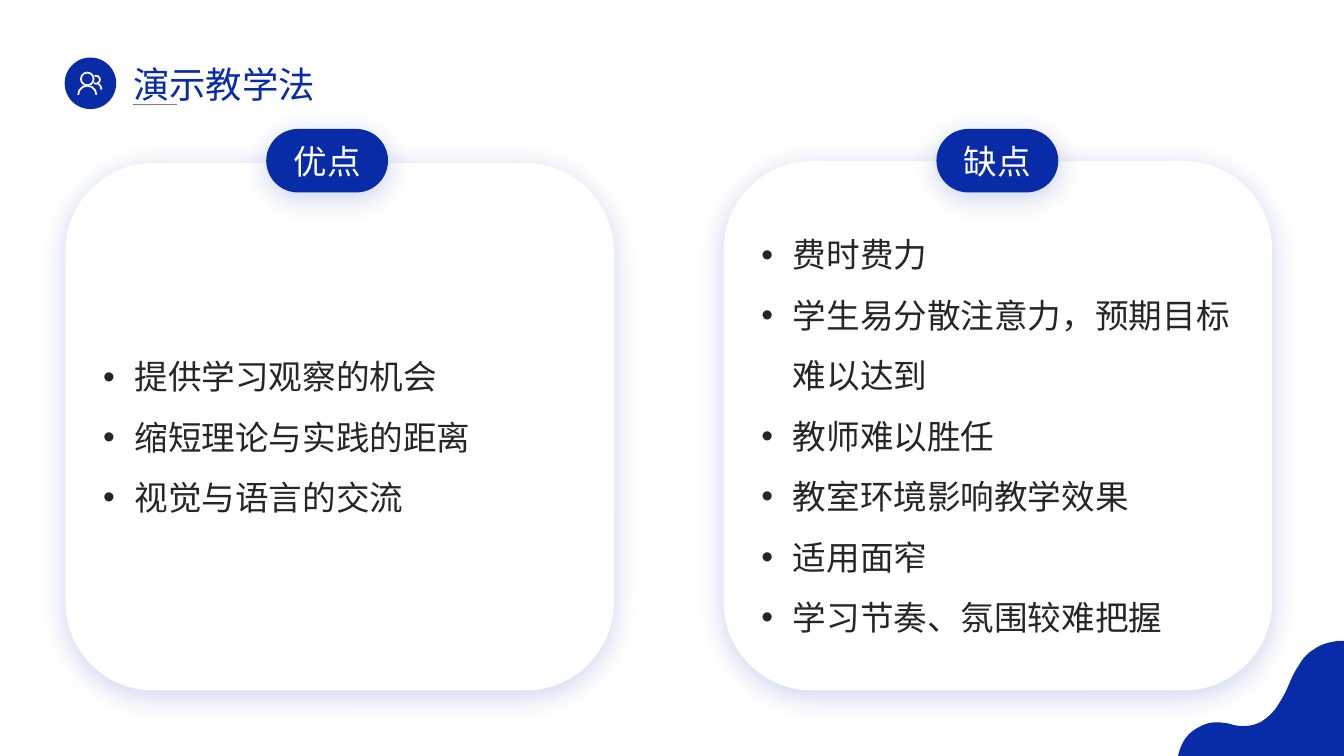
"""Build the slide on the pros and cons of teaching by demonstration."""
from lxml.etree import SubElement
from pptx import Presentation
from pptx.dml.color import RGBColor
from pptx.enum.shapes import MSO_CONNECTOR, MSO_SHAPE
from pptx.enum.text import MSO_ANCHOR, MSO_AUTO_SIZE, PP_ALIGN
from pptx.oxml.ns import qn
from pptx.util import Cm, Pt

BLUE = RGBColor(0x08, 0x2C, 0xA8)
WHITE = RGBColor(0xFF, 0xFF, 0xFF)
INK = RGBColor(0x26, 0x26, 0x26)
GREY = RGBColor(0x80, 0x80, 0x80)
FONT = "Noto Sans CJK SC"


def format_text(paragraph, size, color, alignment):
    paragraph.alignment = alignment
    for run in paragraph.runs:
        run.font.name = FONT
        run.font.size = Pt(size)
        run.font.color.rgb = color
        SubElement(run.font._element, qn("a:ea"), typeface=FONT)


def fill_shape(shape, color, glow=False):
    shape.fill.solid()
    shape.fill.fore_color.rgb = color
    shape.line.fill.background()
    shape.shadow.inherit = False
    if glow:
        effects = shape.element.spPr.find(qn("a:effectLst"))
        shadow = SubElement(effects, qn("a:outerShdw"), blurRad=str(Pt(20)),
                            dist=str(Pt(4)), dir="5400000", algn="t", rotWithShape="0")
        tint = SubElement(shadow, qn("a:srgbClr"), val=str(BLUE))
        SubElement(tint, qn("a:alpha"), val="20000")


presentation = Presentation()
presentation.slide_width = Cm(33.87)
presentation.slide_height = Cm(19.05)
slide = presentation.slides.add_slide(presentation.slide_layouts[3])
shapes = slide.shapes
title, *lists = slide.placeholders

wave_start = (33.73, 16.15)
wave_curves = [
    ((33.5, 16.18), (33.3, 16.23), (33.12, 16.36)),
    ((32.94, 16.46), (32.82, 16.61), (32.72, 16.79)),
    ((32.61, 16.94), (32.54, 17.12), (32.46, 17.3)),
    ((32.39, 17.48), (32.28, 17.65), (32.18, 17.81)),
    ((32.08, 17.96), (31.95, 18.08), (31.78, 18.19)),
    ((31.67, 18.24), (31.57, 18.28), (31.45, 18.29)),
    ((31.29, 18.31), (31.14, 18.29), (30.99, 18.24)),
    ((30.84, 18.21), (30.68, 18.19), (30.53, 18.21)),
    ((30.38, 18.23), (30.23, 18.31), (30.1, 18.39)),
    ((29.87, 18.54), (29.74, 18.8), (29.69, 19.05)),
]
wave_points = []
curve_start = wave_start
for curve in wave_curves:
    for step in range(1, 9):
        t = step / 8
        weights = ((1 - t) ** 3, 3 * t * (1 - t) ** 2, 3 * t ** 2 * (1 - t), t ** 3)
        wave_points.append(tuple(
            Cm(sum(w * point[axis] for w, point in zip(weights, (curve_start, *curve))))
            for axis in (0, 1)))
    curve_start = curve[-1]
wave_points += [(Cm(33.87), Cm(19.05)), (Cm(33.87), Cm(16.15))]
wave = shapes.build_freeform(Cm(wave_start[0]), Cm(wave_start[1]))
wave.add_line_segments(wave_points)
fill_shape(wave.convert_to_shape(), BLUE)

badge = shapes.add_shape(MSO_SHAPE.OVAL, Cm(1.63), Cm(1.45), Cm(1.3), Cm(1.3))
fill_shape(badge, BLUE)

people_strokes = [
    (MSO_SHAPE.OVAL, 2.2, 1.99, 0.16, None),
    (MSO_SHAPE.ARC, 2.2, 2.39, 0.23, (180, 0)),
    (MSO_SHAPE.ARC, 2.42, 2.01, 0.1, (250, 120)),
    (MSO_SHAPE.ARC, 2.38, 2.26, 0.18, (290, 0)),
]
for kind, center_x, center_y, radius, angles in people_strokes:
    stroke = shapes.add_shape(kind, Cm(center_x - radius), Cm(center_y - radius),
                              Cm(2 * radius), Cm(2 * radius))
    stroke.fill.background()
    stroke.line.color.rgb = WHITE
    stroke.line.width = Pt(1.25)
    stroke.shadow.inherit = False
    for index, angle in enumerate(angles or ()):
        stroke.adjustments[index] = angle * 0.6

underline = shapes.add_connector(MSO_CONNECTOR.STRAIGHT, Cm(3.35), Cm(2.64), Cm(4.47), Cm(2.64))
underline.line.color.rgb = GREY
underline.line.width = Pt(0.5)
SubElement(underline.element.spPr, qn("a:effectLst"))

title.left, title.top, title.width, title.height = Cm(3.1), Cm(1.42), Cm(5.16), Cm(1.37)
title.text_frame.text = "演示教学法"
title.text_frame.word_wrap = False
title.text_frame.auto_size = MSO_AUTO_SIZE.NONE
title.text_frame.vertical_anchor = MSO_ANCHOR.MIDDLE
format_text(title.text_frame.paragraphs[0], 26, BLUE, PP_ALIGN.LEFT)

sides = [
    ("优点", 1.65, 4.11, 6.71, ["提供学习观察的机会", "缩短理论与实践的距离", "视觉与语言的交流"]),
    ("缺点", 18.24, 4.06, 23.6, ["费时费力", "学生易分散注意力，预期目标难以达到", "教师难以胜任",
                              "教室环境影响教学效果", "适用面窄", "学习节奏、氛围较难把握"]),
]
for points, (heading, left, top, label_left, items) in zip(lists, sides):
    card = shapes.add_shape(MSO_SHAPE.ROUNDED_RECTANGLE, Cm(left), Cm(top),
                            Cm(13.82), Cm(17.4 - top))
    fill_shape(card, WHITE, glow=True)

    card.element.addnext(points.element)
    points.left, points.top, points.width, points.height = card.left, card.top, card.width, card.height
    frame = points.text_frame
    frame.text = "\n".join(items)
    frame.word_wrap = True
    frame.auto_size = MSO_AUTO_SIZE.NONE
    frame.vertical_anchor = MSO_ANCHOR.MIDDLE
    frame.margin_left = frame.margin_right = Cm(0.95)
    for paragraph in frame.paragraphs:
        paragraph.line_spacing = 1.5
        paragraph.space_before = Pt(0)
        format_text(paragraph, 24, INK, PP_ALIGN.LEFT)
        properties = paragraph._p.get_or_add_pPr()
        properties.set("marL", str(Cm(0.79)))
        properties.set("indent", str(Cm(-0.79)))
        SubElement(properties, qn("a:buFont"), typeface="Arial")
        SubElement(properties, qn("a:buChar"), char="•")

    label = shapes.add_shape(MSO_SHAPE.ROUNDED_RECTANGLE, Cm(label_left), Cm(3.25),
                             Cm(3.07), Cm(1.6))
    label.adjustments[0] = 0.5
    fill_shape(label, BLUE, glow=True)
    label.text_frame.text = heading
    label.text_frame.vertical_anchor = MSO_ANCHOR.MIDDLE
    format_text(label.text_frame.paragraphs[0], 24, WHITE, PP_ALIGN.CENTER)

presentation.save("out.pptx")
